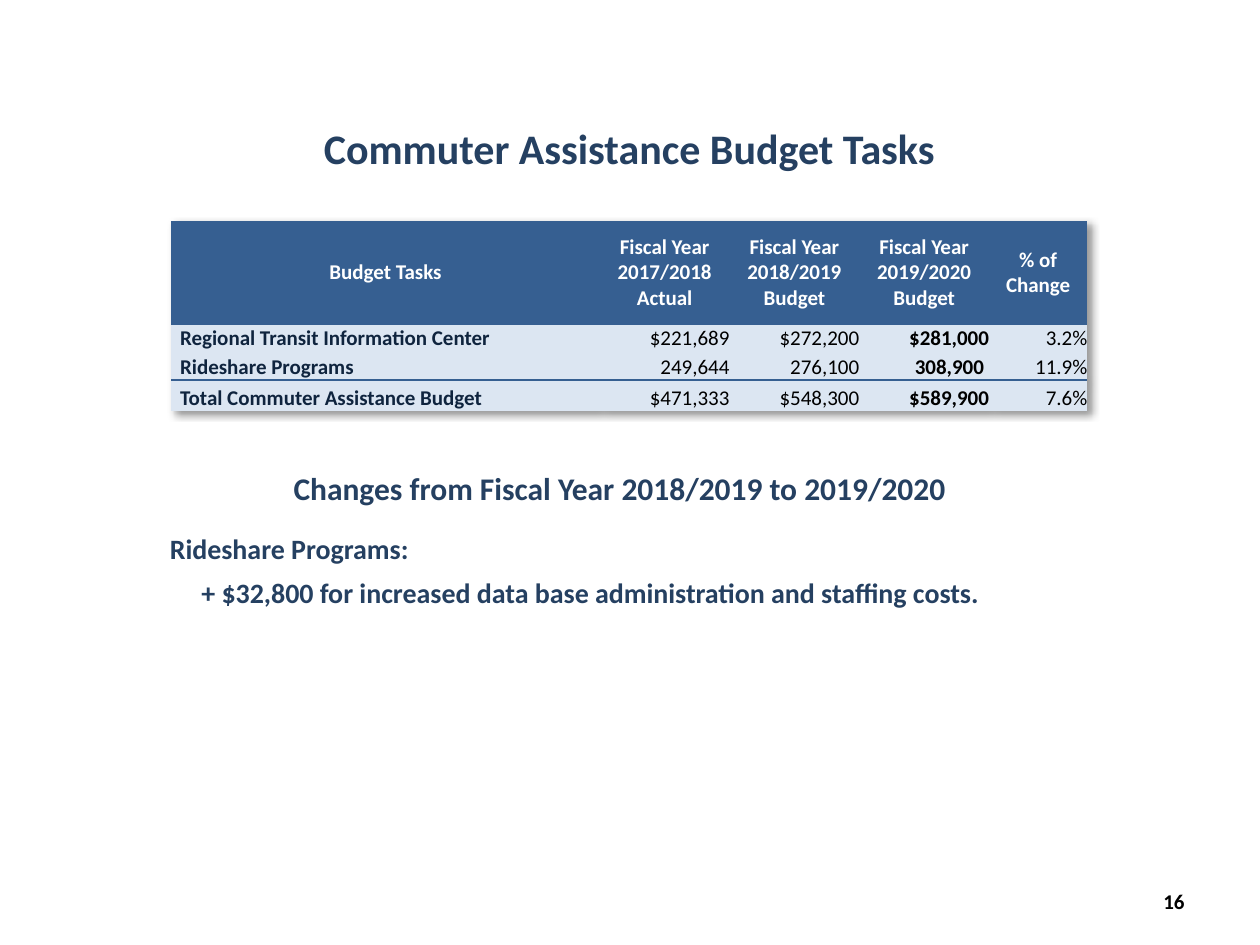
from lxml import etree
from pptx import Presentation
from pptx.dml.color import RGBColor
from pptx.enum.text import MSO_ANCHOR, PP_ALIGN
from pptx.oxml import parse_xml
from pptx.oxml.ns import nsdecls, qn
from pptx.util import Inches, Pt

LEFT, CENTER, RIGHT = PP_ALIGN.LEFT, PP_ALIGN.CENTER, PP_ALIGN.RIGHT
TOP, MIDDLE, BOTTOM = MSO_ANCHOR.TOP, MSO_ANCHOR.MIDDLE, MSO_ANCHOR.BOTTOM
NAVY = RGBColor(0x25, 0x40, 0x61)
DARK_NAVY = RGBColor(0x0F, 0x24, 0x3E)
HEADER_BLUE = RGBColor(0x36, 0x5F, 0x91)
PALE_BLUE = RGBColor(0xDC, 0xE6, 0xF2)
WHITE = RGBColor(0xFF, 0xFF, 0xFF)
BLACK = RGBColor(0, 0, 0)
NO_STYLE = "{2D5ABB26-0587-4C30-8999-92F81FD0307C}"


def write(tf, lines, size, color, align=LEFT, bold=True, anchor=TOP):
    tf.word_wrap = True
    tf.vertical_anchor = anchor
    for i, line in enumerate(lines):
        p = tf.paragraphs[0] if i == 0 else tf.add_paragraph()
        p.alignment = align
        r = p.add_run()
        r.text = line
        r.font.name = "Calibri"
        r.font.size = Pt(size)
        r.font.bold = bold
        r.font.color.rgb = color


def add_border(cell, side):
    # Border lines come before the fill in the cell properties
    cell._tc.get_or_add_tcPr().insert(0, parse_xml(
        f'<a:{side} {nsdecls("a")} w="19050"><a:solidFill>'
        f'<a:srgbClr val="{HEADER_BLUE}"/></a:solidFill></a:{side}>'))


prs = Presentation()
prs.slide_width, prs.slide_height = Inches(10), Inches(7.5)
s = prs.slides.add_slide(prs.slide_layouts[5])

# Title
title = s.shapes.title
title.left, title.top = Inches(1.83), Inches(0.92)
title.width, title.height = Inches(6.33), Inches(0.5)
write(title.text_frame, ["Commuter Assistance Budget Tasks"], 24, NAVY, CENTER)

# Budget table
rows = [
    ["Budget Tasks", "Fiscal Year 2017/2018\nActual", "Fiscal Year 2018/2019\nBudget",
     "Fiscal Year 2019/2020\nBudget", "% of Change"],
    ["Regional Transit Information Center", "$221,689", "$272,200", "$281,000", "3.2%"],
    ["Rideshare Programs", "249,644", "276,100", "308,900", "11.9%"],
    ["Total Commuter Assistance Budget", "$471,333", "$548,300", "$589,900", "7.6%"],
]
col_widths = [3.4, 1.03, 1.03, 1.03, 0.78]
row_heights = [0.83, 0.18, 0.23, 0.25]
table = s.shapes.add_table(len(rows), len(col_widths), Inches(1.36), Inches(1.75),
                           Inches(sum(col_widths)), Inches(sum(row_heights))).table
table.horz_banding = False
tbl_pr = table._tbl.tblPr
tbl_pr.find(qn("a:tableStyleId")).text = NO_STYLE
tbl_pr.insert(0, parse_xml(
    f'<a:effectLst {nsdecls("a")}><a:outerShdw blurRad="50800" dist="38100" dir="2700000" '
    'algn="tl" rotWithShape="0"><a:srgbClr val="000000"><a:alpha val="40000"/></a:srgbClr>'
    '</a:outerShdw></a:effectLst>'))
for col, width in zip(table.columns, col_widths):
    col.width = Inches(width)
for row, height in zip(table.rows, row_heights):
    row.height = Inches(height)

for i, row in enumerate(rows):
    for j, text in enumerate(row):
        cell = table.cell(i, j)
        header, label = i == 0, j == 0
        side_margin = 0.07 if header or label else 0
        cell.margin_left = cell.margin_right = Inches(side_margin)
        cell.margin_top = cell.margin_bottom = 0
        cell.vertical_anchor = MIDDLE if header else BOTTOM
        cell.fill.solid()
        cell.fill.fore_color.rgb = HEADER_BLUE if header else PALE_BLUE
        color = WHITE if header else DARK_NAVY if label else BLACK
        align = CENTER if header else LEFT if label else RIGHT
        write(cell.text_frame, text.split("\n"), 12, color, align,
              bold=header or j in (0, 3), anchor=cell.vertical_anchor)
        # Rule above the total row
        if i == 2:
            add_border(cell, "lnB")
        elif i == 3:
            add_border(cell, "lnT")
table.cell(2, 3).margin_right = Inches(0.04)

# Page number
number = s.shapes.add_textbox(Inches(7.17), Inches(6.95), Inches(2.33), Inches(0.4))
write(number.text_frame, ["16"], 12, BLACK, RIGHT, anchor=MIDDLE)

# Explanation of changes
changes = s.shapes.add_textbox(Inches(1.25), Inches(4.17), Inches(7.5), Inches(0.72))
write(changes.text_frame, [
    "Rideshare Programs:",
    "+ $32,800 for increased data base administration and staffing costs.",
], 16, NAVY)
detail = changes.text_frame.paragraphs[1]
detail.space_before = Pt(6)
detail._p.get_or_add_pPr().set("marL", str(Inches(0.25)))

# Heading of the changes
heading = s.shapes.add_textbox(Inches(0.88), Inches(3.67), Inches(8.08), Inches(0.4))
write(heading.text_frame, ["Changes from Fiscal Year 2018/2019 to 2019/2020"], 18, NAVY, CENTER)

prs.save("out.pptx")
